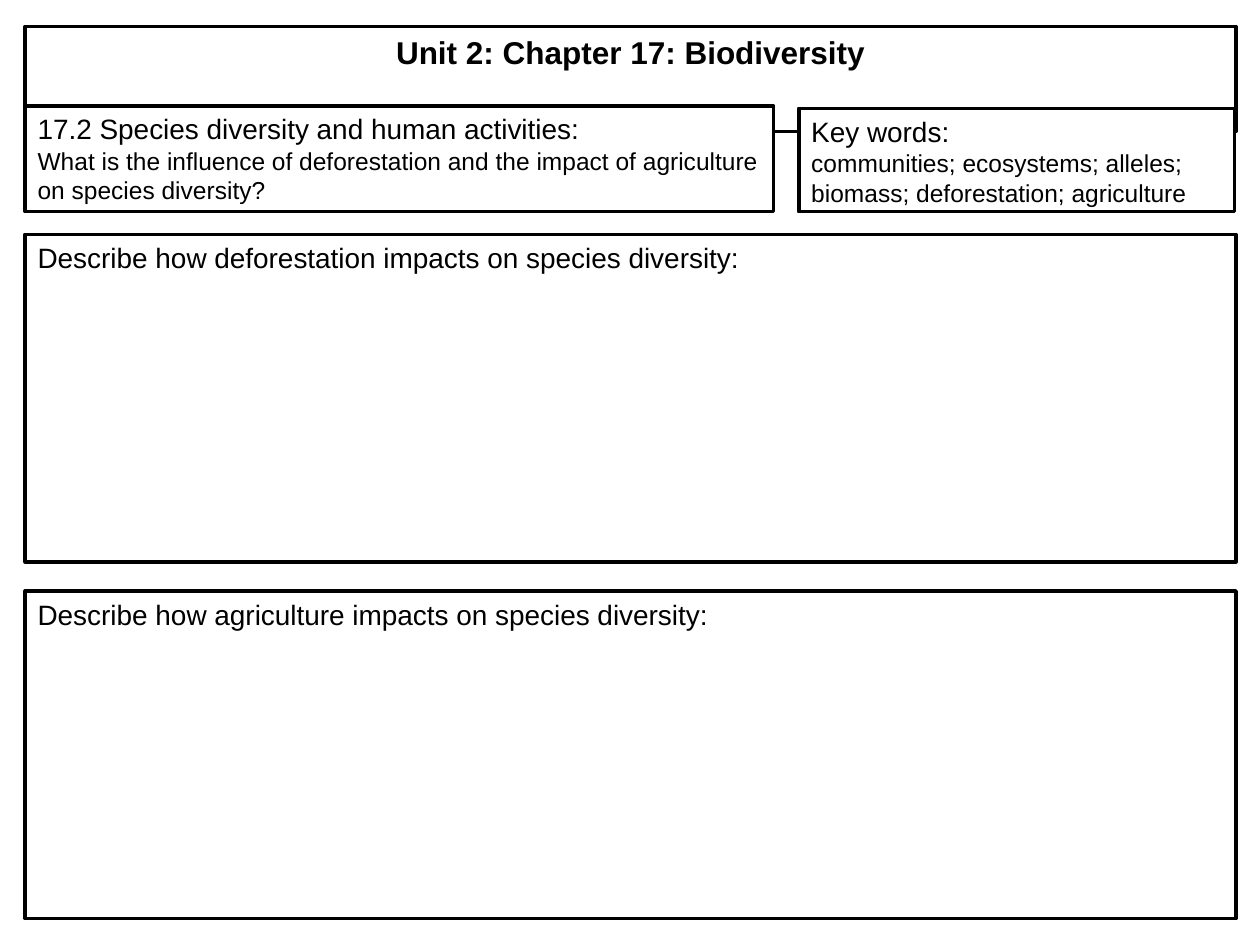
from pptx import Presentation
from pptx.dml.color import RGBColor
from pptx.enum.shapes import MSO_SHAPE
from pptx.enum.text import MSO_ANCHOR, MSO_AUTO_SIZE, PP_ALIGN
from pptx.util import Inches, Pt

COLORS = {"ink": "000000", "paper": "FFFFFF"}
FONT = "Arial"
LEFT, WIDE = 0.2, 9.61
TASK_TOP, TASK_HIGH, TASK_STEP = 1.86, 2.6, 2.83
TASKS = ("deforestation", "agriculture")


def color(name):
    """Return the named colour."""
    return RGBColor.from_string(COLORS[name])


def write(para, text, size=16, bold=False, align=PP_ALIGN.LEFT):
    """Put formatted text into a paragraph."""
    para.alignment = align
    run = para.add_run()
    run.text = text
    run.font.name = FONT
    run.font.size = Pt(size)
    run.font.bold = bold
    run.font.color.rgb = color("ink")


def frame(shape, grow=False):
    """Give a shape its outline and text settings, and return its text frame."""
    shape.fill.solid()
    shape.fill.fore_color.rgb = color("paper")
    shape.line.color.rgb = color("ink")
    shape.line.width = Pt(2)
    body = shape.text_frame
    body.word_wrap = True
    body.vertical_anchor = MSO_ANCHOR.TOP
    body.auto_size = MSO_AUTO_SIZE.SHAPE_TO_FIT_TEXT if grow else MSO_AUTO_SIZE.NONE
    return body


def header(slide, box, text):
    """Place the framed slide title."""
    title = slide.shapes.title
    title.left, title.top, title.width, title.height = map(Inches, box)
    write(frame(title, grow=True).paragraphs[0], text,
          size=18, bold=True, align=PP_ALIGN.CENTER)


def panel(slide, box, head, detail=None, grow=False):
    """Place a framed panel with a heading and optional detail."""
    shape = slide.shapes.add_shape(MSO_SHAPE.RECTANGLE, *map(Inches, box))
    shape.shadow.inherit = False
    body = frame(shape, grow)
    write(body.paragraphs[0], head)
    if detail:
        write(body.add_paragraph(), detail, size=14)


def main():
    """Build and save the worksheet slide."""
    deck = Presentation()
    deck.slide_width, deck.slide_height = Inches(10), Inches(7.5)
    slide = deck.slides.add_slide(deck.slide_layouts[5])
    header(slide, (LEFT, 0.21, WIDE, 0.4), "Unit 2: Chapter 17: Biodiversity")
    panel(slide, (LEFT, 0.84, 5.94, 0.84),
          "17.2 Species diversity and human activities:",
          "What is the influence of deforestation and the impact of "
          "agriculture on species diversity?", grow=True)
    panel(slide, (6.34, 0.86, 3.46, 0.82), "Key words:",
          "communities; ecosystems; alleles; biomass; deforestation; agriculture")
    for row, cause in enumerate(TASKS):
        panel(slide, (LEFT, TASK_TOP + row * TASK_STEP, WIDE, TASK_HIGH),
              f"Describe how {cause} impacts on species diversity:")
    deck.save("out.pptx")


if __name__ == "__main__":
    main()
